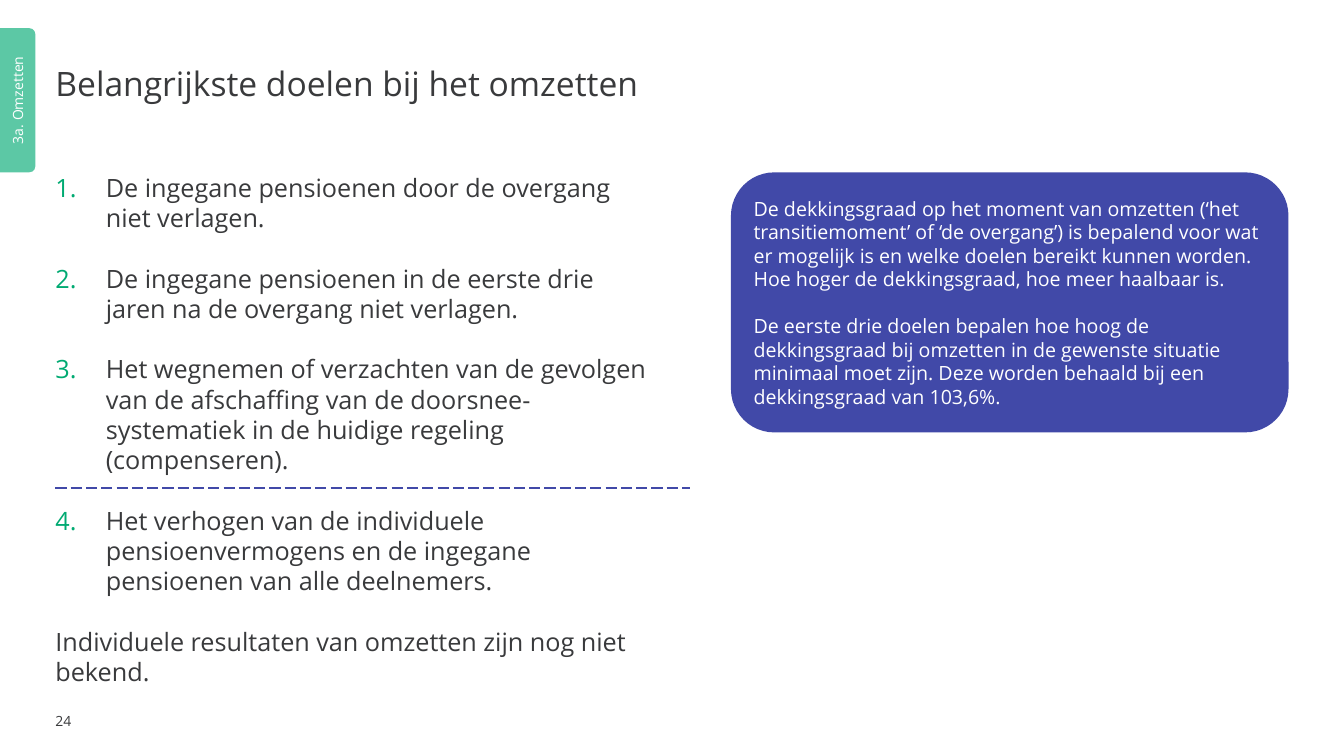
from lxml.etree import SubElement
from pptx import Presentation
from pptx.dml.color import RGBColor
from pptx.enum.dml import MSO_LINE
from pptx.enum.shapes import MSO_CONNECTOR, MSO_SHAPE
from pptx.enum.text import MSO_ANCHOR, MSO_AUTO_SIZE, PP_ALIGN
from pptx.oxml.ns import qn
from pptx.util import Inches, Pt

FONT = "Open Sans"
DARK, WHITE, BLUE = "393A3C", "FFFFFF", "4149A8"
MINT, GREEN = "5CC8A5", "00AA72"
LEFT, TOP = 0.55, 1.71

GOALS = [
    "De ingegane pensioenen door de overgang niet verlagen.",
    "De ingegane pensioenen in de eerste drie jaren na de overgang niet verlagen.",
    "Het wegnemen of verzachten van de gevolgen van de afschaffing van de "
    "doorsnee-systematiek in de huidige regeling (compenseren).",
    "Het verhogen van de individuele pensioenvermogens en de ingegane "
    "pensioenen van alle deelnemers.",
]
CLOSING = "Individuele resultaten van omzetten zijn nog niet bekend."
NOTES = [
    "De dekkingsgraad op het moment van omzetten (‘het transitiemoment’ of "
    "‘de overgang’) is bepalend voor wat er mogelijk is en welke doelen bereikt "
    "kunnen worden. Hoe hoger de dekkingsgraad, hoe meer haalbaar is.",
    "De eerste drie doelen bepalen hoe hoog de dekkingsgraad bij omzetten in de "
    "gewenste situatie minimaal moet zijn. Deze worden behaald bij een "
    "dekkingsgraad van 103,6%.",
]


def color(code):
    """Turn a hex string into a colour."""
    return RGBColor.from_string(code)


def box(*sizes):
    """Turn numbers into lengths in inches."""
    return [Inches(size) for size in sizes]


def write(shape, *texts, size=18, ink=DARK, align=PP_ALIGN.LEFT,
          anchor=MSO_ANCHOR.TOP, inset=(0, 0), leading=None, gap=0):
    """Fill a shape with formatted paragraphs and return them."""
    frame = shape.text_frame
    frame.word_wrap = True
    frame.auto_size = MSO_AUTO_SIZE.NONE
    frame.vertical_anchor = anchor
    frame.margin_left = frame.margin_right = Inches(inset[0])
    frame.margin_top = frame.margin_bottom = Inches(inset[1])
    frame.text = "\n".join(texts)
    for para in frame.paragraphs:
        para.alignment = align
        para.line_spacing = leading
        para.space_before = Pt(0)
        para.space_after = Pt(gap if para.text != texts[-1] else 0)
        font = para.runs[0].font
        font.name, font.size = FONT, Pt(size)
        font.color.rgb = color(ink)
    return frame.paragraphs


def number(para):
    """Give a paragraph a green number and a hanging indent."""
    props = para._p.get_or_add_pPr()
    props.set("marL", str(Inches(0.5)))
    props.set("indent", str(-Inches(0.5)))
    tint = SubElement(props, qn("a:buClr"))
    SubElement(tint, qn("a:srgbClr"), val=GREEN)
    SubElement(props, qn("a:buFont"), typeface=FONT)
    SubElement(props, qn("a:buAutoNum"), type="arabicPeriod")


def panel(slide, kind, place, fill):
    """Add a filled shape without outline or shadow."""
    shape = slide.shapes.add_shape(kind, *box(*place))
    shape.shadow.inherit = False
    shape.fill.solid()
    shape.fill.fore_color.rgb = color(fill)
    shape.line.fill.background()
    return shape


def label(slide, place, *texts, **style):
    """Add a text box and return its paragraphs and shape."""
    shape = slide.shapes.add_textbox(*box(*place))
    return write(shape, *texts, **style), shape


def divide(slide, start, end, y):
    """Add a dashed horizontal line."""
    line = slide.shapes.add_connector(
        MSO_CONNECTOR.STRAIGHT, *box(start, y, end, y))
    line.line.color.rgb = color(BLUE)
    line.line.width = Pt(1)
    line.line.dash_style = MSO_LINE.LONG_DASH
    SubElement(line._element.spPr, qn("a:effectLst"))


def main():
    """Build the slide and save it."""
    deck = Presentation()
    deck.slide_width, deck.slide_height = box(13.33, 7.5)
    slide = deck.slides.add_slide(deck.slide_layouts[5])

    title = slide.shapes.title
    title.left, title.top, title.width, title.height = box(LEFT, 0.28, 12.23, 1.14)
    write(title, "Belangrijkste doelen bij het omzetten", size=24,
          anchor=MSO_ANCHOR.MIDDLE, leading=0.9)

    paras, _ = label(slide, (LEFT, TOP, 5.94, 4.83), *GOALS, CLOSING,
                     leading=Pt(21.6), gap=21.6)
    for para in paras[:len(GOALS)]:
        number(para)
    label(slide, (LEFT, 7.07, 0.35, 0.17), "24", size=10, anchor=MSO_ANCHOR.MIDDLE)

    callout = panel(slide, MSO_SHAPE.ROUNDED_RECTANGLE, (7.25, TOP, 5.53, 2.58), BLUE)
    write(callout, *NOTES, size=14, ink=WHITE, anchor=MSO_ANCHOR.MIDDLE,
          inset=(0.1, 0.05), leading=Pt(16.8), gap=16.8)

    place = (-0.54, 0.82, 1.43, 0.35)
    tab = panel(slide, MSO_SHAPE.ROUND_2_SAME_RECTANGLE, place, MINT)
    tab.rotation = 90
    _, name = label(slide, place, "3a. Omzetten", size=10, ink=WHITE,
                    align=PP_ALIGN.CENTER, inset=(0.2, 0.09))
    name.rotation = 270

    divide(slide, LEFT, 6.84, 4.84)
    deck.save("out.pptx")


if __name__ == "__main__":
    main()
